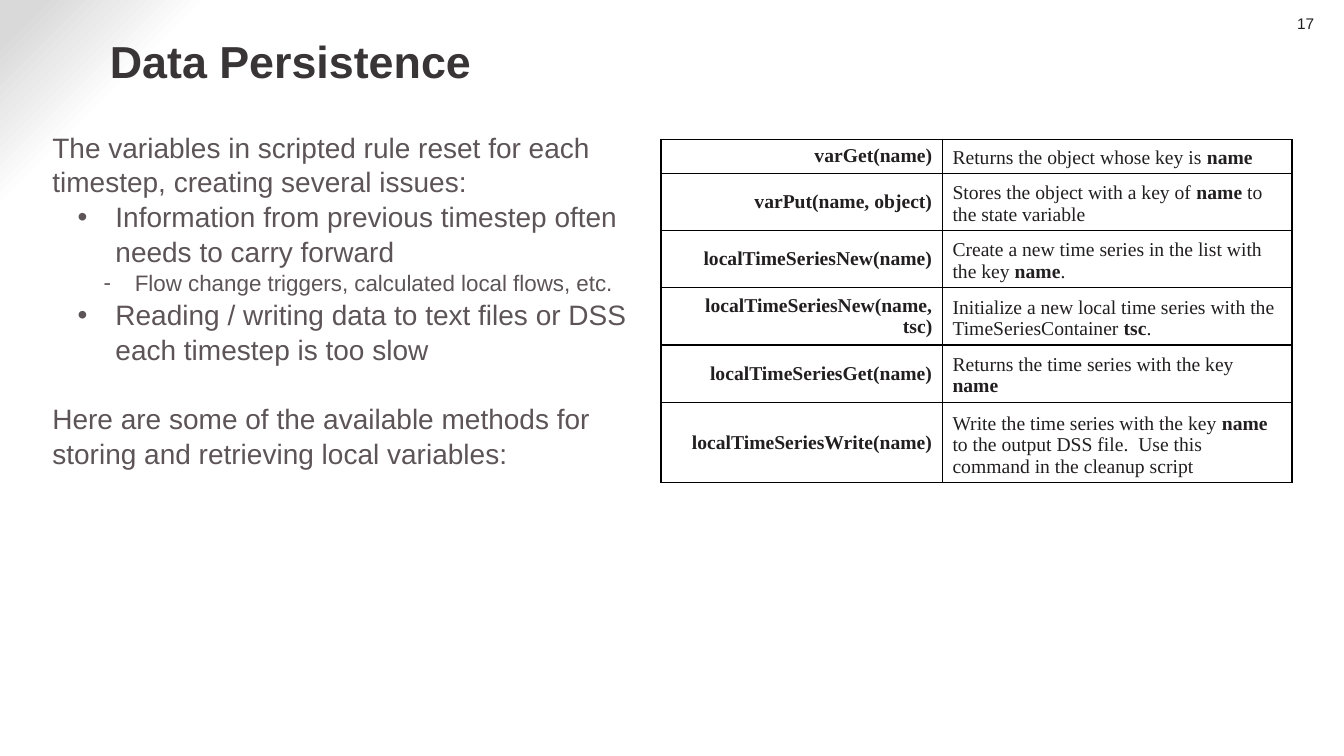
from dataclasses import dataclass

from lxml.etree import SubElement
from pptx import Presentation
from pptx.dml.color import RGBColor
from pptx.enum.text import MSO_ANCHOR as Anchor, PP_ALIGN as Align
from pptx.oxml import parse_xml
from pptx.oxml.ns import nsdecls, qn
from pptx.util import Cm, Pt


@dataclass(frozen=True)
class Theme:
    sans: str = "Arial"
    serif: str = "Times New Roman"
    title: str = "393436"
    body: str = "5C5457"
    dark: str = "221F20"
    border: str = "000000"
    white: str = "FFFFFF"
    corner: str = "D9D9D9"
    title_size: int = 32
    body_size: int = 20
    detail_size: int = 16
    table_size: int = 14
    number_size: int = 11


THEME = Theme()

BULLETS = {1: ("•", 1.59, 0.95), 2: ("-", 2.08, 0.79)}

BODY = [
    (0, "The variables in scripted rule reset for each timestep, creating several issues:", 0),
    (1, "Information from previous timestep often needs to carry forward", 0),
    (2, "Flow change triggers, calculated local flows, etc.", 0),
    (1, "Reading / writing data to text files or DSS each timestep is too slow", 0),
    (0, "Here are some of the available methods for storing and retrieving local variables:", 24),
]

METHODS = [
    ("varGet(name)", "Returns the object whose key is *name*", 0.86),
    ("varPut(name, object)", "Stores the object with a key of *name* to the state variable", 1.44),
    ("localTimeSeriesNew(name)", "Create a new time series in the list with the key *name*.", 1.44),
    ("localTimeSeriesNew(name, tsc)",
     "Initialize a new local time series with the TimeSeriesContainer *tsc*.", 1.44),
    ("localTimeSeriesGet(name)", "Returns the time series with the key *name*", 1.44),
    ("localTimeSeriesWrite(name)",
     "Write the time series with the key *name* to the output DSS file.  "
     "Use this command in the cleanup script", 2.03),
]


def style(font, name, size, color, bold=False):
    font.name = name
    font.size = Pt(size)
    font.bold = bold
    font.color.rgb = RGBColor.from_string(color)


def set_background(slide):
    stops = [(0, THEME.white), (87, THEME.white), (90, THEME.white),
             (98, THEME.corner), (100, THEME.corner)]
    gs = "".join(f'<a:gs pos="{pos * 1000}"><a:srgbClr val="{color}"/></a:gs>'
                 for pos, color in stops)
    fill = slide.background.fill
    fill.solid()
    bg_pr = slide._element.cSld.find(qn("p:bg")).find(qn("p:bgPr"))
    gradient = parse_xml(
        f'<a:gradFill {nsdecls("a")} rotWithShape="1"><a:gsLst>{gs}</a:gsLst>'
        '<a:path path="circle"><a:fillToRect l="100000" t="100000"/></a:path></a:gradFill>')
    bg_pr.replace(bg_pr.find(qn("a:solidFill")), gradient)


def add_box(slide, left, top, width, height, anchor=Anchor.TOP, margins=None):
    sp = slide.shapes.add_textbox(Cm(left), Cm(top), Cm(width), Cm(height))
    tf = sp.text_frame
    tf.word_wrap = True
    tf.vertical_anchor = anchor
    if margins:
        tf.margin_left, tf.margin_top, tf.margin_right, tf.margin_bottom = map(Cm, margins)
    return tf


def add_line(slide, text, box, size, color, align, margin, bold=False):
    tf = add_box(slide, *box, anchor=Anchor.MIDDLE, margins=(margin, 0, 0, 0))
    tf.text = text
    p = tf.paragraphs[0]
    p.alignment = align
    style(p.runs[0].font, THEME.sans, size, color, bold)


def set_bullet(p, level):
    char, left, hanging = BULLETS[level]
    p.level = level
    p_pr = p._p.get_or_add_pPr()
    p_pr.set("marL", str(Cm(left)))
    p_pr.set("indent", str(-Cm(hanging)))
    SubElement(p_pr, qn("a:buFont")).set("typeface", THEME.sans)
    SubElement(p_pr, qn("a:buChar")).set("char", char)


def add_body(slide):
    tf = add_box(slide, 1.07, 3.12, 15.16, 15.54)
    for i, (level, text, gap) in enumerate(BODY):
        p = tf.add_paragraph() if i else tf.paragraphs[0]
        p.text = text
        p.line_spacing = 1.04
        if gap:
            p.space_before = Pt(gap)
        if level:
            set_bullet(p, level)
        size = THEME.detail_size if level == 2 else THEME.body_size
        style(p.runs[0].font, THEME.sans, size, THEME.body)


def set_borders(cell):
    tc_pr = cell._tc.get_or_add_tcPr()
    for i, side in enumerate(("lnL", "lnR", "lnT", "lnB")):
        tc_pr.insert(i, parse_xml(
            f'<a:{side} {nsdecls("a")} w="{Pt(1)}"><a:solidFill>'
            f'<a:srgbClr val="{THEME.border}"/></a:solidFill></a:{side}>'))


def fill_cell(cell, text, align, anchor):
    cell.fill.background()
    set_borders(cell)
    cell.vertical_anchor = anchor
    p = cell.text_frame.paragraphs[0]
    p.alignment = align
    for i, part in enumerate(text.split("*")):
        if part:
            r = p.add_run()
            r.text = part
            style(r.font, THEME.serif, THEME.table_size, THEME.dark, bold=i % 2 == 1)


def add_methods(slide):
    widths = (7.09, 8.81)
    height = sum(row[2] for row in METHODS)
    table = slide.shapes.add_table(len(METHODS), 2, Cm(16.66), Cm(3.51),
                                   Cm(sum(widths)), Cm(height)).table
    table.first_row = table.horz_banding = False
    for column, width in zip(table.columns, widths):
        column.width = Cm(width)
    for i, (method, description, row_height) in enumerate(METHODS):
        table.rows[i].height = Cm(row_height)
        fill_cell(table.cell(i, 0), f"*{method}*", Align.RIGHT, Anchor.MIDDLE)
        fill_cell(table.cell(i, 1), description, Align.LEFT, Anchor.BOTTOM)


def main():
    prs = Presentation()
    prs.slide_width, prs.slide_height = Cm(33.87), Cm(19.05)
    slide = prs.slides.add_slide(prs.slide_layouts[6])
    set_background(slide)
    add_line(slide, "17", (31.6, 0.36, 1.52, 0.48), THEME.number_size,
             THEME.dark, Align.RIGHT, 0.25)
    add_methods(slide)
    add_body(slide)
    add_line(slide, "Data Persistence", (2.64, 0.36, 28.85, 2.31), THEME.title_size,
             THEME.title, Align.LEFT, 0.13, bold=True)
    prs.save("out.pptx")


if __name__ == "__main__":
    main()
